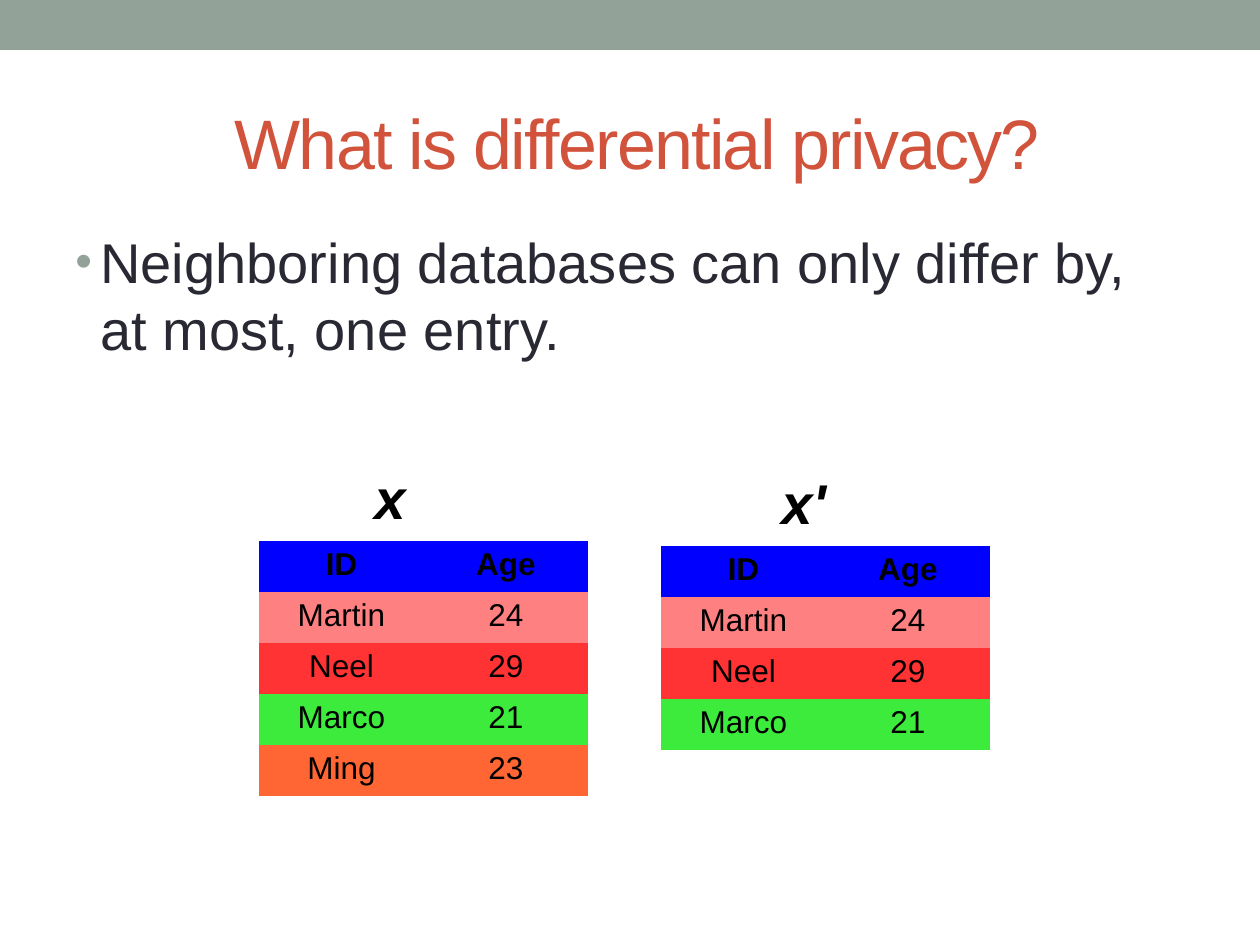
"""Builds a slide on differential privacy with two neighboring databases."""
import dataclasses

import lxml.etree
import pptx
import pptx.dml.color
import pptx.enum.shapes
import pptx.enum.text
import pptx.oxml
import pptx.oxml.ns
import pptx.util

PX = 914400 // 126


@dataclasses.dataclass(frozen=True)
class Theme:
    font: str = "Arial"
    accent: str = "93A299"
    title: str = "D2533C"
    body: str = "292934"
    black: str = "000000"
    border: str = "FFFFFF"
    rows: tuple = ("0000FF", "FF8080", "FF3333", "3DEB3D", "FF6633")
    title_size: int = 40
    body_size: int = 32
    cell_size: int = 18


def write(frame, text, size, color, bold=False, italic=False):
    para = frame.paragraphs[0]
    para.text = text
    font = para.font
    font.name, font.size = theme.font, pptx.util.Pt(size)
    font.bold, font.italic = bold, italic
    font.color.rgb = pptx.dml.color.RGBColor.from_string(color)
    return para


def add_text(left, top, width, height, text, color, **style):
    box = page.shapes.add_textbox(left * PX, top * PX, width * PX, height * PX)
    box.text_frame.word_wrap = True
    return write(box.text_frame, text, theme.body_size, color, **style)


theme = Theme()
deck = pptx.Presentation()
deck.slide_width, deck.slide_height = pptx.util.Inches(10), pptx.util.Inches(7.5)
page = deck.slides.add_slide(deck.slide_layouts[5])

band = page.shapes.add_shape(
    pptx.enum.shapes.MSO_SHAPE.RECTANGLE, 0, 0, deck.slide_width, 50 * PX
)
band.shadow.inherit = False
band.fill.solid()
band.fill.fore_color.rgb = pptx.dml.color.RGBColor.from_string(theme.accent)
band.line.fill.background()

title = page.shapes.title
title.left, title.top, title.width, title.height = 63 * PX, 73 * PX, 1134 * PX, 136 * PX
title.text_frame.vertical_anchor = pptx.enum.text.MSO_ANCHOR.MIDDLE
para = write(title.text_frame, "What is differential privacy?", theme.title_size, theme.title)
para.alignment = pptx.enum.text.PP_ALIGN.LEFT
para._p.get_or_add_pPr().set("marL", str(159 * PX))
para.runs[0]._r.get_or_add_rPr().set("spc", "-100")

para = add_text(
    63, 221, 1134, 672,
    "Neighboring databases can only differ by, at most, one entry.", theme.body,
)
para.space_before = pptx.util.Pt(6.4)
props = para._p.get_or_add_pPr()
props.set("marL", str(25 * PX))
props.set("indent", str(-25 * PX))
bullet = pptx.oxml.parse_xml(
    f'<a:pPr {pptx.oxml.ns.nsdecls("a")}><a:buClr><a:srgbClr val="{theme.accent}"/></a:buClr>'
    '<a:buSzPct val="85000"/><a:buFont typeface="Arial"/><a:buChar char="•"/></a:pPr>'
)
for position, part in enumerate(list(bullet), start=1):
    props.insert(position, part)

records = [("ID", "Age"), ("Martin", "24"), ("Neel", "29"), ("Marco", "21"), ("Ming", "23")]
databases = [
    ("x", 362, 457, 259, 541, records),
    ("x'", 769, 462, 661, 546, records[:-1]),
]
row_height, column_widths = 51, (165, 164)

for name, name_left, name_top, left, top, rows in databases:
    table = page.shapes.add_table(
        len(rows), 2, left * PX, top * PX, sum(column_widths) * PX, len(rows) * row_height * PX
    ).table
    for column, width in zip(table.columns, column_widths):
        column.width = width * PX
    for row_index, (record, fill) in enumerate(zip(rows, theme.rows)):
        table.rows[row_index].height = row_height * PX
        for column_index, value in enumerate(record):
            cell = table.cell(row_index, column_index)
            cell.margin_left = cell.margin_right = 13 * PX
            cell.margin_top, cell.margin_bottom = 10 * PX, 6 * PX
            para = write(
                cell.text_frame, value, theme.cell_size, theme.black, bold=row_index == 0
            )
            para.alignment = pptx.enum.text.PP_ALIGN.CENTER
            para.line_spacing = 0.87
            cell.fill.solid()
            cell.fill.fore_color.rgb = pptx.dml.color.RGBColor.from_string(fill)
            cell_props = cell._tc.get_or_add_tcPr()
            for position, side in enumerate(("lnL", "lnR", "lnT", "lnB")):
                border = pptx.oxml.parse_xml(
                    f'<a:{side} {pptx.oxml.ns.nsdecls("a")} w="360"><a:solidFill>'
                    f'<a:srgbClr val="{theme.border}"/></a:solidFill></a:{side}>'
                )
                cell_props.insert(position, border)
    add_text(name_left, name_top, 95, 74, name, theme.black, bold=True, italic=True)

deck.save("out.pptx")
